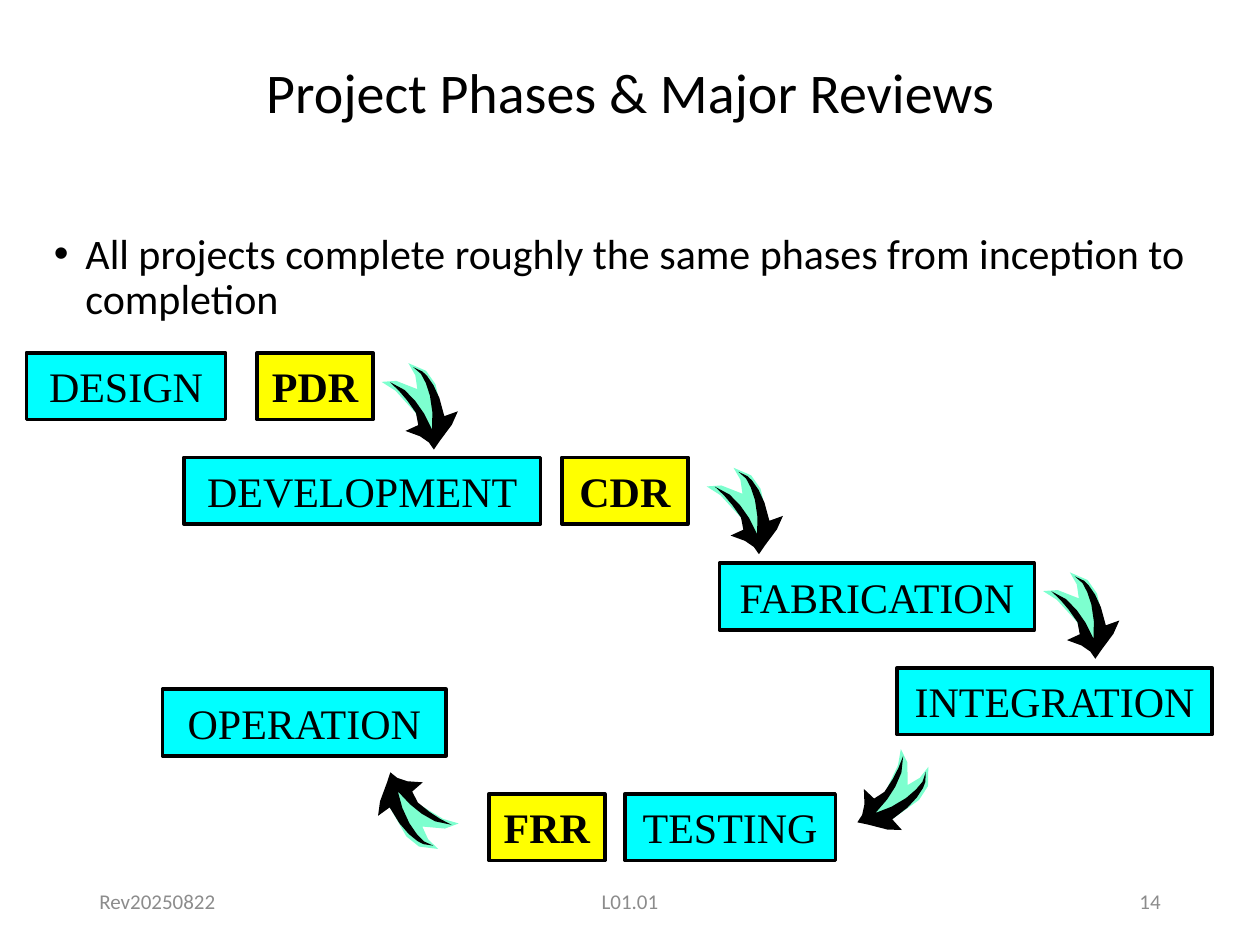
from typing import NamedTuple

from lxml import etree
from pptx import Presentation, util as u
from pptx.dml.color import RGBColor
from pptx.enum import shapes as sh, text as tx
from pptx.oxml.ns import qn

CYAN, YELLOW, MINT, BLACK, GRAY = "00FFFF", "FFFF00", "7DFFCF", "000000", "8C8C8C"
LEFT, MID, RIGHT = tx.PP_ALIGN.LEFT, tx.PP_ALIGN.CENTER, tx.PP_ALIGN.RIGHT


class Box(NamedTuple):
    label: str
    left: float
    top: float
    width: float
    review: bool = False


class Arrow(NamedTuple):
    """Top left of the mint glow and of the black body, before turning."""
    glow: tuple[float, float]
    body: tuple[float, float]
    turn: float


class Note(NamedTuple):
    label: str
    left: float
    width: float
    align: tx.PP_ALIGN


BOXES = [
    Box("OPERATION", 1.29, 5.47, 2.25),
    Box("DESIGN", 0.21, 2.8, 1.58),
    Box("PDR", 2.04, 2.8, 0.92, True),
    Box("DEVELOPMENT", 1.46, 3.63, 2.83),
    Box("CDR", 4.46, 3.63, 1, True),
    Box("FABRICATION", 5.71, 4.47, 2.5),
    Box("INTEGRATION", 7.12, 5.3, 2.5),
    Box("TESTING", 4.96, 6.3, 1.67),
    Box("FRR", 3.88, 6.3, 0.92, True),
]
ARROWS = [
    Arrow((3.17, 2.88), (3.14, 2.92), 325.1),
    Arrow((5.75, 3.71), (5.72, 3.75), 325.1),
    Arrow((8.42, 4.54), (8.39, 4.58), 325.1),
    Arrow((6.96, 5.99), (6.86, 6), 32.8),
    Arrow((3.13, 6.18), (3.06, 6.1), 128.8),
]
NOTES = [
    Note("Rev20250822", 0.69, 2.25, LEFT),
    Note("L01.01", 3.31, 3.38, MID),
    Note("14", 7.06, 2.25, RIGHT),
]
GLOW = [(0.1, 0.06), (0.2, 0.21), (0.25, 0.11), (0.26, 0), (0.34, 0.13),
        (0.34, 0.26), (0.23, 0.54), (0.06, 0.6), (0.08, 0.35), (0.05, 0.12), (0, 0)]
BODY = [(0.12, 0), (0.18, 0.12), (0.2, 0.24), (0.2, 0.36), (0.18, 0.5), (0.26, 0.39),
        (0.32, 0.27), (0.35, 0.17), (0.36, 0.09), (0.34, 0.01), (0.38, 0.08),
        (0.39, 0.13), (0.39, 0.22), (0.37, 0.33), (0.32, 0.47), (0.43, 0.5),
        (0.33, 0.56), (0.18, 0.61), (0.1, 0.64), (0.1, 0.57), (0.07, 0.49),
        (0, 0.39), (0.11, 0.41), (0.15, 0.32), (0.15, 0.2), (0.14, 0.1)]


def paint(part, color: str) -> None:
    """Give a fill a solid colour."""
    part.solid()
    part.fore_color.rgb = RGBColor.from_string(color)


def write(frame, words: str, size: float, align, font: str = "Calibri",
          color: str = BLACK, bold: bool = False):
    """Put one paragraph in a frame and format its run."""
    frame.text = words
    frame.word_wrap = True
    para = frame.paragraphs[0]
    para.alignment = align
    face = para.runs[0].font
    face.name, face.size, face.bold = font, u.Pt(size), bold
    paint(face.fill, color)
    return para


def place(shape, *frame: float) -> None:
    shape.left, shape.top, shape.width, shape.height = map(u.Inches, frame)


def draw_box(slide, box: Box) -> None:
    frame = map(u.Inches, (box.left, box.top, box.width, 0.53))
    shape = slide.shapes.add_shape(sh.MSO_SHAPE.RECTANGLE, *frame)
    shape.shadow.inherit = False
    paint(shape.fill, YELLOW if box.review else CYAN)
    paint(shape.line.fill, BLACK)
    shape.line.width = u.Pt(2)
    shape.text_frame.vertical_anchor = tx.MSO_ANCHOR.MIDDLE
    write(shape.text_frame, box.label, 24, MID, "Times New Roman", bold=box.review)


def draw_curve(slide, points: list, spot: tuple, turn: float, color: str) -> None:
    dots = [(u.Inches(x), u.Inches(y)) for x, y in points]
    pen = slide.shapes.build_freeform(*dots[0])
    pen.add_line_segments(dots[1:], close=True)
    shape = pen.convert_to_shape(*map(u.Inches, spot))
    shape.shadow.inherit = False
    shape.rotation = turn
    paint(shape.fill, color)
    shape.line.fill.background()


def draw_note(slide, note: Note) -> None:
    frame = map(u.Inches, (note.left, 6.95, note.width, 0.4))
    text = slide.shapes.add_textbox(*frame).text_frame
    text.vertical_anchor = tx.MSO_ANCHOR.MIDDLE
    write(text, note.label, 12, note.align, color=GRAY)


def draw_point(slide, words: str) -> None:
    """Add the bulleted sentence."""
    frame = map(u.Inches, (0.33, 1.8, 9.25, 0.83))
    para = write(slide.shapes.add_textbox(*frame).text_frame, words, 24, LEFT)
    para.line_spacing = 0.9
    props = para._p.get_or_add_pPr()
    props.set("marL", str(u.Inches(0.25)))
    props.set("indent", str(-u.Inches(0.25)))
    etree.SubElement(props, qn("a:buFont")).set("typeface", "Arial")
    etree.SubElement(props, qn("a:buChar")).set("char", "•")


def main() -> None:
    deck = Presentation()
    deck.slide_width, deck.slide_height = u.Inches(10), u.Inches(7.5)
    slide = deck.slides.add_slide(deck.slide_layouts[5])
    title = slide.shapes.title
    place(title, 1.55, 0.51, 6.91, 0.5)
    title.text_frame.vertical_anchor = tx.MSO_ANCHOR.MIDDLE
    write(title.text_frame, "Project Phases & Major Reviews", 32, MID).line_spacing = 0.9
    draw_point(slide, "All projects complete roughly the same phases "
                      "from inception to completion")
    for box in BOXES:
        draw_box(slide, box)
    for arrow in ARROWS:
        draw_curve(slide, GLOW, arrow.glow, arrow.turn, MINT)
        draw_curve(slide, BODY, arrow.body, arrow.turn, BLACK)
    for note in NOTES:
        draw_note(slide, note)
    deck.save("out.pptx")


if __name__ == "__main__":
    main()
